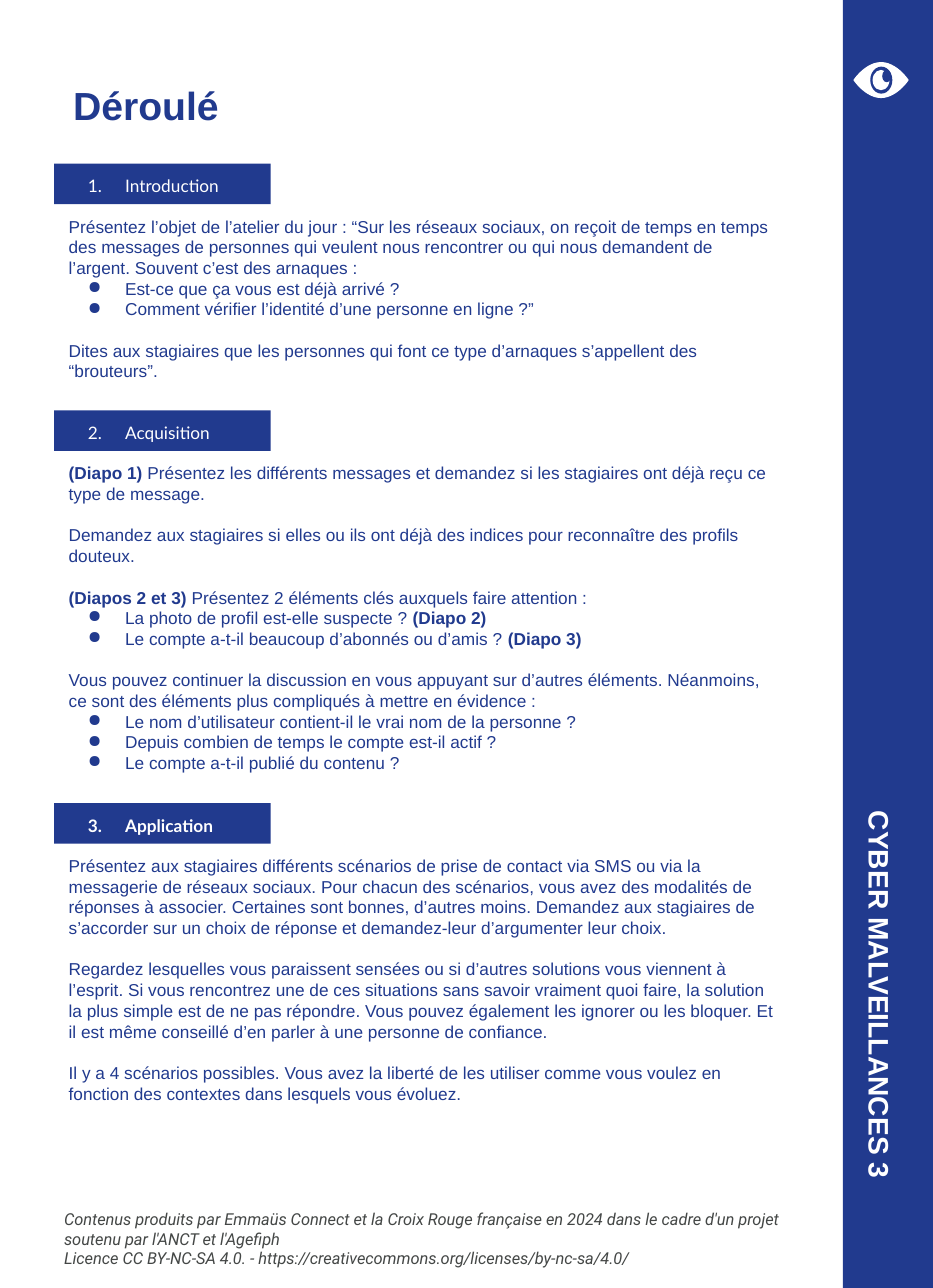
from dataclasses import dataclass

from lxml import etree
from pptx import Presentation
from pptx.dml.color import RGBColor
from pptx.enum.shapes import MSO_SHAPE
from pptx.enum.text import MSO_ANCHOR, PP_ALIGN
from pptx.oxml.ns import qn
from pptx.shapes.autoshape import Shape
from pptx.slide import Slide
from pptx.text.text import TextFrame
from pptx.util import Inches, Pt

RECTANGLE, OVAL = MSO_SHAPE.RECTANGLE, MSO_SHAPE.OVAL
TOP, MIDDLE = MSO_ANCHOR.TOP, MSO_ANCHOR.MIDDLE
LEFT = PP_ALIGN.LEFT
WIDTH, HEIGHT = Inches(8.27), Inches(11.42)


@dataclass(frozen=True)
class Theme:
    blue: str = "213A8E"
    white: str = "FFFFFF"
    grey: str = "444746"
    body_font: str = "Arial"
    heading_font: str = "Lato"
    credit_font: str = "Roboto"
    title_size: float = 25
    banner_size: float = 18
    body_size: float = 11
    credit_size: float = 10.5
    line_pitch: float = 13.2


@dataclass(frozen=True)
class Area:
    """Position and size in percent of the slide's width and height."""
    left: float
    top: float
    width: float
    height: float

    def lengths(self) -> tuple[int, int, int, int]:
        return (across(self.left), down(self.top),
                across(self.width), down(self.height))


@dataclass(frozen=True)
class Style:
    font: str
    size: float
    color: str
    bold: bool = False
    italic: bool = False


@dataclass(frozen=True)
class Line:
    """A paragraph; ** surrounds its bold passages."""
    text: str
    bullet: bool = False
    gap: bool = False


@dataclass(frozen=True)
class Section:
    top: float
    heading: str
    bold: bool
    body_height: float
    lines: tuple[Line, ...]


THEME = Theme()
BODY = Style(THEME.body_font, THEME.body_size, THEME.blue)
TITLE = Style(THEME.body_font, THEME.title_size, THEME.blue, bold=True)
BANNER = Style(THEME.body_font, THEME.banner_size, THEME.white, bold=True)
CREDIT = Style(THEME.credit_font, THEME.credit_size, THEME.grey, italic=True)
BAR_HEIGHT = 3.15
BODY_OFFSET = 3.18

SECTIONS = (
    Section(12.7, "Introduction", False, 15, (
        Line("Présentez l’objet de l’atelier du jour : “Sur les réseaux sociaux, on reçoit de temps en temps des messages de personnes qui veulent nous rencontrer ou qui nous demandent de l’argent. Souvent c’est des arnaques :"),
        Line("Est-ce que ça vous est déjà arrivé ?", bullet=True),
        Line("Comment vérifier l’identité d’une personne en ligne ?”", bullet=True),
        Line("Dites aux stagiaires que les personnes qui font ce type d’arnaques s’appellent des “brouteurs”.", gap=True),
    )),
    Section(31.87, "Acquisition", False, 26, (
        Line("**(Diapo 1)** Présentez les différents messages et demandez si les stagiaires ont déjà reçu ce type de message."),
        Line("Demandez aux stagiaires si elles ou ils ont déjà des indices pour reconnaître des profils douteux.", gap=True),
        Line("**(Diapos 2 et 3)** Présentez 2 éléments clés auxquels faire attention :", gap=True),
        Line("La photo de profil est-elle suspecte ? **(Diapo 2)**", bullet=True),
        Line("Le compte a-t-il beaucoup d’abonnés ou d’amis ?** (Diapo 3)**", bullet=True),
        Line("Vous pouvez continuer la discussion en vous appuyant sur d’autres éléments. Néanmoins, ce sont des éléments plus compliqués à mettre en évidence :", gap=True),
        Line("Le nom d’utilisateur contient-il le vrai nom de la personne ?", bullet=True),
        Line("Depuis combien de temps le compte est-il actif ?", bullet=True),
        Line("Le compte a-t-il publié du contenu ?", bullet=True),
    )),
    Section(62.35, "Application", True, 21, (
        Line("Présentez aux stagiaires différents scénarios de prise de contact via SMS ou via la messagerie de réseaux sociaux. Pour chacun des scénarios, vous avez des modalités de réponses à associer. Certaines sont bonnes, d’autres moins. Demandez aux stagiaires de s’accorder sur un choix de réponse et demandez-leur d’argumenter leur choix."),
        Line("Regardez lesquelles vous paraissent sensées ou si d’autres solutions vous viennent à l’esprit. Si vous rencontrez une de ces situations sans savoir vraiment quoi faire, la solution la plus simple est de ne pas répondre. Vous pouvez également les ignorer ou les bloquer. Et il est même conseillé d’en parler à une personne de confiance.", gap=True),
        Line("Il y a 4 scénarios possibles. Vous avez la liberté de les utiliser comme vous voulez en fonction des contextes dans lesquels vous évoluez.", gap=True),
    )),
)
CREDITS = (
    Line("Contenus produits par Emmaüs Connect et la Croix Rouge française en 2024 dans le cadre d'un projet soutenu par l'ANCT et l'Agefiph"),
    Line("Licence CC BY-NC-SA 4.0. - https://creativecommons.org/licenses/by-nc-sa/4.0/"),
)


def across(percent: float) -> int:
    return round(WIDTH * percent / 100)


def down(percent: float) -> int:
    return round(HEIGHT * percent / 100)


def paint(shape: Shape, color: str) -> None:
    shape.shadow.inherit = False
    shape.fill.solid()
    shape.fill.fore_color.rgb = RGBColor.from_string(color)
    shape.line.fill.background()


def add_filled(slide: Slide, kind: MSO_SHAPE, area: Area, color: str) -> Shape:
    shape = slide.shapes.add_shape(kind, *area.lengths())
    paint(shape, color)
    return shape


def add_marker(paragraph, color: str, tag: str, **attributes: str) -> None:
    """Hang the paragraph behind a bullet or a number."""
    properties = paragraph._p.get_or_add_pPr()
    properties.set("marL", str(Inches(0.5)))
    properties.set("indent", str(Inches(-0.33)))
    bullet_color = etree.SubElement(properties, qn("a:buClr"))
    etree.SubElement(bullet_color, qn("a:srgbClr"), val=color)
    etree.SubElement(properties, qn(tag), **attributes)


def set_font(paragraph, style: Style) -> None:
    font = paragraph.font
    font.name, font.size = style.font, Pt(style.size)
    font.bold, font.italic = style.bold, style.italic
    font.color.rgb = RGBColor.from_string(style.color)


def write_lines(frame: TextFrame, lines: tuple[Line, ...], style: Style,
                pitch: float | None = None) -> None:
    for index, line in enumerate(lines):
        paragraph = frame.add_paragraph() if index else frame.paragraphs[0]
        if pitch:
            paragraph.line_spacing = Pt(pitch)
        if line.gap:
            paragraph.space_before = Pt(THEME.line_pitch)
        if line.bullet:
            add_marker(paragraph, style.color, "a:buChar", char="●")
        set_font(paragraph, style)
        for position, passage in enumerate(line.text.split("**")):
            if passage:
                run = paragraph.add_run()
                run.text = passage
                if position % 2:
                    run.font.bold = True


def add_text(slide: Slide, area: Area, lines: tuple[Line, ...], style: Style,
             pitch: float | None = None) -> Shape:
    box = slide.shapes.add_textbox(*area.lengths())
    frame = box.text_frame
    frame.word_wrap, frame.vertical_anchor = True, TOP
    frame.margin_left = frame.margin_top = frame.margin_bottom = Inches(0.1)
    frame.margin_right = Inches(0.1)
    write_lines(frame, lines, style, pitch)
    return box


def add_section(slide: Slide, number: int, section: Section) -> None:
    bar = add_filled(slide, RECTANGLE, Area(5.8, section.top, 23.22, BAR_HEIGHT), THEME.blue)
    frame = bar.text_frame
    frame.word_wrap, frame.vertical_anchor = True, MIDDLE
    frame.margin_left, frame.margin_top, frame.margin_bottom = Inches(0.13), Inches(0.04), 0
    heading = frame.paragraphs[0]
    heading.alignment = LEFT
    add_marker(heading, THEME.white, "a:buAutoNum", type="arabicPeriod", startAt=str(number))
    set_font(heading, Style(THEME.heading_font, THEME.body_size, THEME.white, section.bold))
    heading.add_run().text = section.heading
    body = Area(6.17, section.top + BODY_OFFSET, 78.6, section.body_height)
    add_text(slide, body, section.lines, BODY, THEME.line_pitch)


def add_eye(slide: Slide) -> None:
    center_x, center_y, half_width, half_height = 94.44, 6.22, 2.96, 1.4
    steps = [step / 12 for step in range(13)]
    # Upper left quarter of the lid: a cubic curve from the corner to the top.
    quarter = [(-(1 - t) ** 3 - 2.88 * t * (1 - t) ** 2 - 1.59 * t ** 2 * (1 - t),
                -0.36 * t * (1 - t) ** 2 - 3 * t ** 2 * (1 - t) - t ** 3) for t in steps]
    upper = quarter + [(-x, y) for x, y in reversed(quarter)]
    outline = upper + [(x, -y) for x, y in reversed(upper)]
    points = [(across(center_x + x * half_width), down(center_y + y * half_height))
              for x, y in outline]
    builder = slide.shapes.build_freeform(*points[0])
    builder.add_line_segments(points[1:], close=True)
    paint(builder.convert_to_shape(), THEME.white)
    add_filled(slide, OVAL, Area(93.28, 5.17, 2.37, 2.1), THEME.blue)
    add_filled(slide, OVAL, Area(93.53, 5.43, 1.81, 1.58), THEME.white)
    add_filled(slide, OVAL, Area(94.56, 5.43, 0.97, 0.96), THEME.blue)


def main() -> None:
    presentation = Presentation()
    presentation.slide_width, presentation.slide_height = WIDTH, HEIGHT
    slide = presentation.slides.add_slide(presentation.slide_layouts[6])
    add_text(slide, Area(5.68, 92.99, 85.13, 6.39), CREDITS, CREDIT)
    add_filled(slide, RECTANGLE, Area(90.33, 0, 9.67, 100), THEME.blue)
    add_text(slide, Area(6.65, 5.43, 77.15, 4.12), (Line("Déroulé"),), TITLE)
    banner = add_text(slide, Area(73.03, 74.78, 41.84, 4.9),
                      (Line("CYBER MALVEILLANCES 3"),), BANNER)
    banner.rotation = 90
    banner.text_frame.margin_right = 0
    for number, section in enumerate(SECTIONS, start=1):
        add_section(slide, number, section)
    add_eye(slide)
    presentation.save("out.pptx")


if __name__ == "__main__":
    main()
